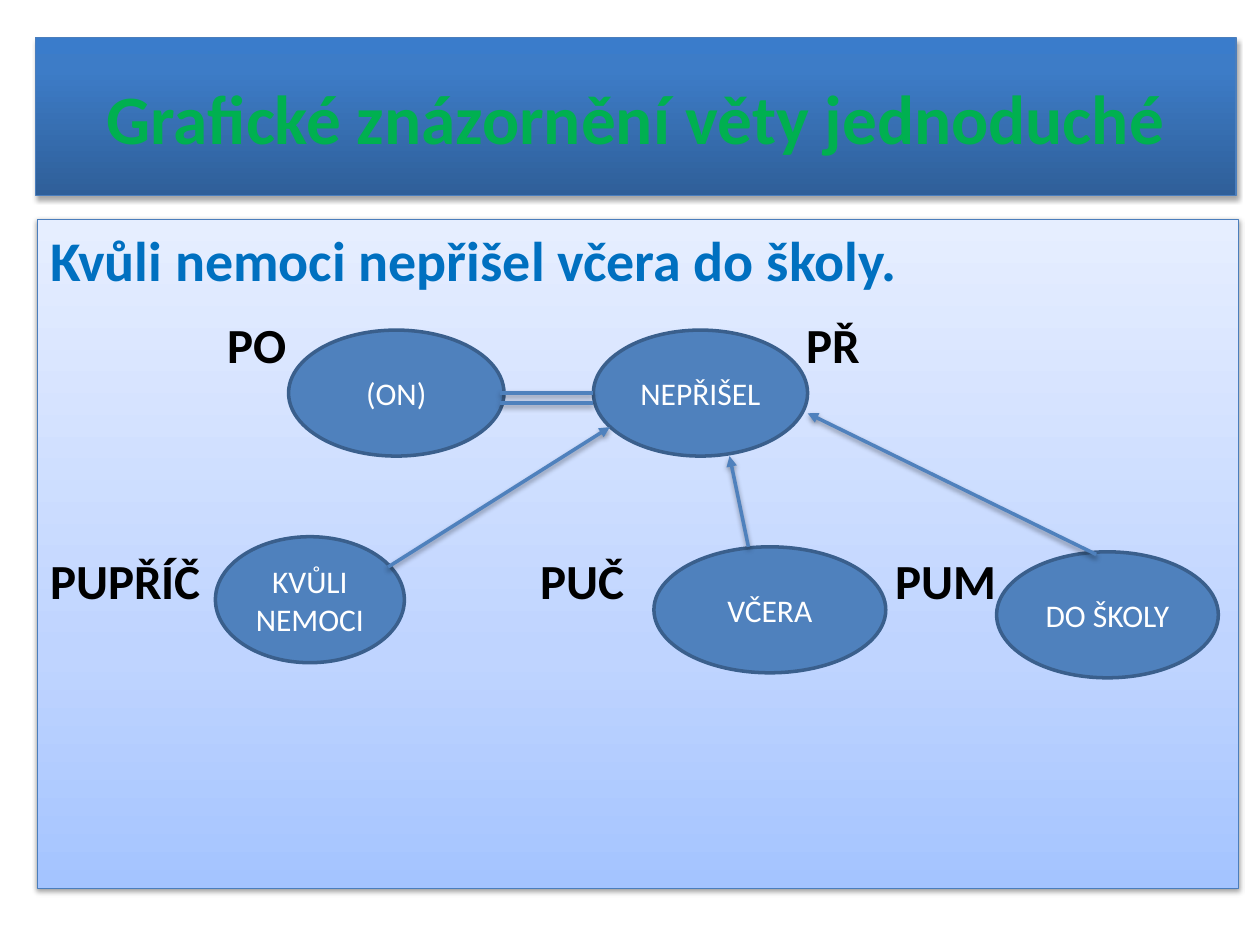
from lxml import etree
from pptx import Presentation
from pptx.dml.color import RGBColor
from pptx.enum.shapes import MSO_CONNECTOR as Connector, MSO_SHAPE as Shape
from pptx.enum.text import MSO_ANCHOR as Anchor, PP_ALIGN as Align
from pptx.oxml import parse_xml
from pptx.oxml.ns import nsdecls, qn
from pptx.util import Inches, Pt

FONT = "Calibri"
GREEN = RGBColor(0x00, 0xB0, 0x50)
SENTENCE_BLUE = RGBColor(0x00, 0x70, 0xC0)
BLACK = RGBColor(0x00, 0x00, 0x00)
WHITE = RGBColor(0xFF, 0xFF, 0xFF)
OVAL_FILL = RGBColor(0x4F, 0x81, 0xBD)
OVAL_EDGE = RGBColor(0x3A, 0x5F, 0x8C)
PANEL_EDGE = RGBColor(0x4B, 0x7E, 0xBC)
TITLE_STOPS = [
    (0, RGBColor(0x2F, 0x5F, 0x99)),
    (80, RGBColor(0x3D, 0x7C, 0xC7)),
    (100, RGBColor(0x3A, 0x7C, 0xCB)),
]
PANEL_STOPS = [
    (0, RGBColor(0xA4, 0xC4, 0xFF)),
    (35, RGBColor(0xBF, 0xD4, 0xFF)),
    (100, RGBColor(0xE6, 0xEE, 0xFF)),
]

TITLE = "Grafické znázornění věty jednoduché"
SENTENCE = "Kvůli nemoci nepřišel včera do školy."
OVAL_HEIGHT = 1
MEMBERS = [
    ("(ON)", 2.29, 2.62, 1.71),
    ("NEPŘIŠEL", 4.71, 2.62, 1.7),
    ("KVŮLI NEMOCI", 1.71, 4.26, 1.5),
    ("VČERA", 5.19, 4.34, 1.84),
    ("DO ŠKOLY", 7.91, 4.38, 1.76),
]
LABEL_HEIGHT = 0.5
LABEL_ROWS = [
    (2.73, [("PO", 1.81, 0.6), ("PŘ", 6.4, 0.6)]),
    (4.6, [("PUPŘÍČ", 0.4, 1.3), ("PUČ", 4.29, 0.8), ("PUM", 7.11, 0.9)]),
]
PREDICATE_BARS = [((3.97, y), (4.71, y)) for y in (3.12, 3.2)]
DEPENDENCIES = [
    ((3.08, 4.5), (4.84, 3.39)),
    ((5.94, 4.34), (5.79, 3.62)),
    ((8.7, 4.4), (6.41, 3.28)),
]


def write(shape, text, size, color, bold=False, align=Align.LEFT,
          anchor=Anchor.TOP, inset=0.1):
    frame = shape.text_frame
    frame.word_wrap = True
    frame.vertical_anchor = anchor
    frame.margin_left = frame.margin_right = Inches(inset)
    paragraph = frame.paragraphs[0]
    paragraph.alignment = align
    run = paragraph.add_run()
    run.text = text
    run.font.name = FONT
    run.font.size = Pt(size)
    run.font.bold = bold
    run.font.color.rgb = color


def cast_shadow(properties, alpha, distance):
    for effects in properties.findall(qn("a:effectLst")):
        properties.remove(effects)
    properties.append(parse_xml(
        f'<a:effectLst {nsdecls("a")}><a:outerShdw blurRad="{Pt(3.1)}" '
        f'dist="{Pt(distance)}" dir="5400000" rotWithShape="0">'
        f'<a:srgbClr val="000000"><a:alpha val="{alpha * 1000}"/></a:srgbClr>'
        '</a:outerShdw></a:effectLst>'))


def style_panel(panel, stops, alpha, distance):
    panel.fill.background()
    panel.line.color.rgb = PANEL_EDGE
    panel.line.width = Pt(0.75)
    properties = panel.fill._xPr
    marks = "".join(
        f'<a:gs pos="{position * 1000}"><a:srgbClr val="{color}"/></a:gs>'
        for position, color in stops)
    gradient = parse_xml(
        f'<a:gradFill {nsdecls("a")} rotWithShape="1"><a:gsLst>{marks}</a:gsLst>'
        '<a:lin ang="16200000" scaled="0"/></a:gradFill>')
    properties.replace(properties.find(qn("a:noFill")), gradient)
    cast_shadow(properties, alpha, distance)


def connect(slide, start, end, arrow=False):
    link = slide.shapes.add_connector(
        Connector.STRAIGHT, *(Inches(value) for value in start + end))
    link.line.color.rgb = OVAL_FILL
    link.line.width = Pt(2)
    properties = link.line._get_or_add_ln().getparent()
    if arrow:
        etree.SubElement(properties.find(qn("a:ln")), qn("a:tailEnd"), type="triangle")
    cast_shadow(properties, 38, 1.6)


def main():
    deck = Presentation()
    deck.slide_width, deck.slide_height = Inches(10), Inches(7.5)
    slide = deck.slides.add_slide(deck.slide_layouts[5])

    title = slide.shapes.title
    title.left, title.top = Inches(0.28), Inches(0.3)
    title.width, title.height = Inches(9.53), Inches(1.25)
    style_panel(title, TITLE_STOPS, 35, 1.8)
    write(title, TITLE, 39.6, GREEN, bold=True, align=Align.CENTER, anchor=Anchor.MIDDLE)

    panel = slide.shapes.add_shape(
        Shape.RECTANGLE, Inches(0.3), Inches(1.74), Inches(9.53), Inches(5.31))
    style_panel(panel, PANEL_STOPS, 38, 1.6)
    write(panel, SENTENCE, 32, SENTENCE_BLUE, bold=True)

    for middle, labels in LABEL_ROWS:
        for text, left, width in labels:
            label = slide.shapes.add_textbox(
                Inches(left), Inches(middle - LABEL_HEIGHT / 2),
                Inches(width), Inches(LABEL_HEIGHT))
            write(label, text, 28, BLACK, bold=True, anchor=Anchor.MIDDLE, inset=0)

    for text, left, top, width in MEMBERS:
        oval = slide.shapes.add_shape(
            Shape.OVAL, Inches(left), Inches(top), Inches(width), Inches(OVAL_HEIGHT))
        oval.shadow.inherit = False
        oval.fill.solid()
        oval.fill.fore_color.rgb = OVAL_FILL
        oval.line.color.rgb = OVAL_EDGE
        oval.line.width = Pt(2)
        write(oval, text, 18, WHITE, align=Align.CENTER, anchor=Anchor.MIDDLE)

    for start, end in PREDICATE_BARS:
        connect(slide, start, end)
    for start, end in DEPENDENCIES:
        connect(slide, start, end, arrow=True)

    deck.save("out.pptx")


if __name__ == "__main__":
    main()
